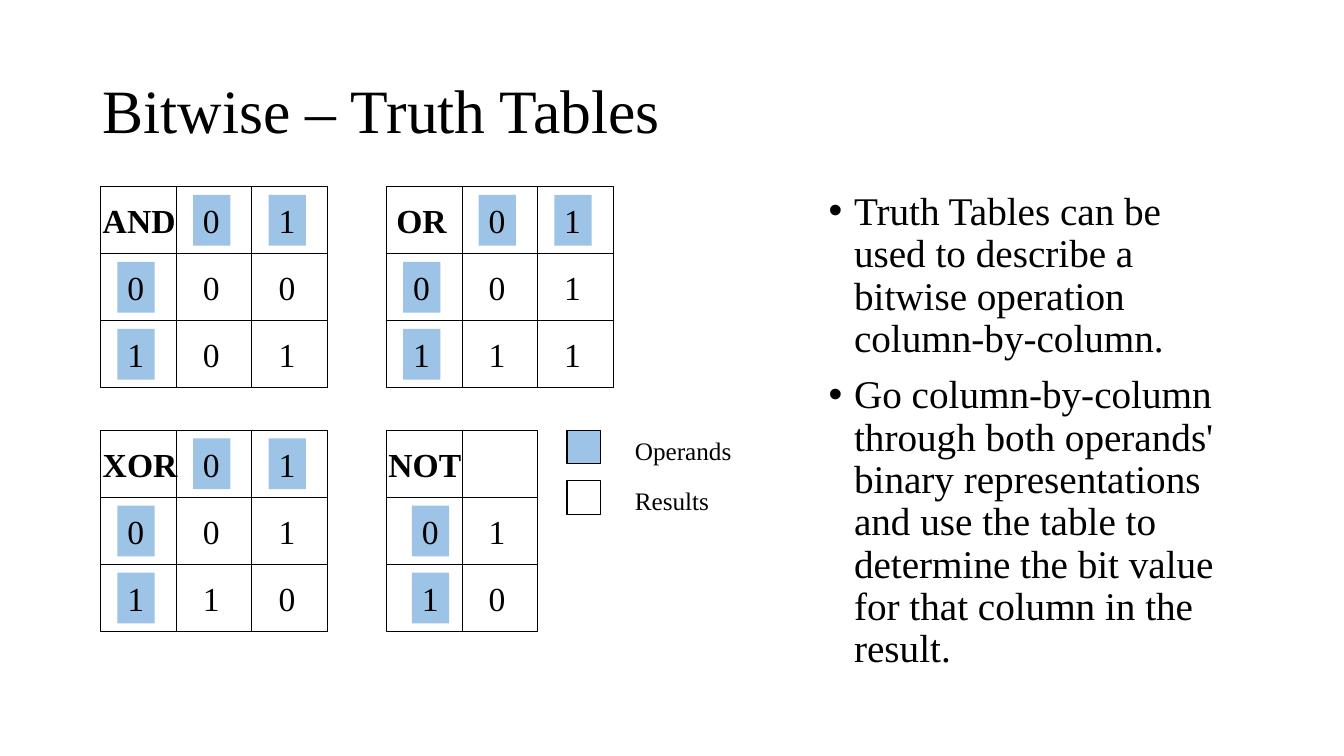
from pptx import Presentation
from pptx.dml.color import RGBColor
from pptx.enum.shapes import MSO_SHAPE
from pptx.enum.text import MSO_ANCHOR, MSO_AUTO_SIZE as AutoSize, PP_ALIGN
from pptx.util import Cm, Pt

BLACK = RGBColor(0x00, 0x00, 0x00)
WHITE = RGBColor(0xFF, 0xFF, 0xFF)
BLUE = RGBColor(0x9D, 0xC3, 0xE6)
FONT = "Times New Roman"
CELL_WIDTH, CELL_HEIGHT = 1.905, 1.69
DIGIT_WIDTH, DIGIT_HEIGHT = 0.94, 1.28


def write(para, text, size=24, bold=False):
    para.alignment = PP_ALIGN.LEFT
    span = para.add_run()
    span.text = text
    span.font.name = FONT
    span.font.size = Pt(size)
    span.font.bold = bold
    span.font.color.rgb = BLACK


def add_box(shapes, left, top, width, height, text="", fill=None,
            outline=False, size=24, bold=False):
    place = Cm(left), Cm(top), Cm(width), Cm(height)
    if fill is None and not outline:
        box = shapes.add_textbox(*place)
    else:
        box = shapes.add_shape(MSO_SHAPE.RECTANGLE, *place)
        box.shadow.inherit = False
        if fill is None:
            box.fill.background()
        else:
            box.fill.solid()
            box.fill.fore_color.rgb = fill
        if outline:
            box.line.color.rgb = BLACK
            box.line.width = Pt(0.75)
        else:
            box.line.fill.background()
    if text:
        frame = box.text_frame
        frame.word_wrap = False
        frame.auto_size = AutoSize.SHAPE_TO_FIT_TEXT
        frame.vertical_anchor = MSO_ANCHOR.TOP
        write(frame.paragraphs[0], text, size=size, bold=bold)


deck = Presentation()
deck.slide_width, deck.slide_height = Cm(33.87), Cm(19.05)
page = deck.slides.add_slide(deck.slide_layouts[1])

# Title
title = page.shapes.title
title.left, title.top, title.width, title.height = Cm(2.33), Cm(1.01), Cm(29.21), Cm(3.68)
title.text_frame.auto_size = AutoSize.NONE
title.text_frame.vertical_anchor = MSO_ANCHOR.MIDDLE
title_para = title.text_frame.paragraphs[0]
title_para.line_spacing = 0.9
write(title_para, "Bitwise – Truth Tables", size=44)

# Explanation
body = page.placeholders[1]
body.left, body.top, body.width, body.height = Cm(20.63), Cm(4.7), Cm(10.9), Cm(13.34)
body.text_frame.auto_size = AutoSize.NONE
points = [
    "Truth Tables can be used to describe a bitwise operation column-by-column.",
    "Go column-by-column through both operands' binary representations and use "
    "the table to determine the bit value for that column in the result.",
]
for index, point in enumerate(points):
    para = body.text_frame.paragraphs[0] if index == 0 else body.text_frame.add_paragraph()
    para.line_spacing = 0.9
    para.space_before = Pt(10)
    properties = para._p.get_or_add_pPr()
    properties.set("marL", str(Cm(0.64)))
    properties.set("indent", str(-Cm(0.64)))
    write(para, point, size=28)

# Truth tables: left, top, name offset, name width, first digit offset, rows
tables = [
    (2.54, 4.7, -0.2, 2.36, 0.42, [["AND", "0", "1"], ["0", "0", "0"], ["1", "0", "1"]]),
    (9.74, 10.84, -0.2, 2.34, 0.64, [["NOT", ""], ["0", "1"], ["1", "0"]]),
    (9.74, 4.7, 0, 1.78, 0.42, [["OR", "0", "1"], ["0", "0", "1"], ["1", "1", "1"]]),
    (2.54, 10.84, -0.2, 2.39, 0.42, [["XOR", "0", "1"], ["0", "0", "1"], ["1", "1", "0"]]),
]
for left, top, name_offset, name_width, first_offset, rows in tables:
    cells = [(row, column, left + column * CELL_WIDTH, top + row * CELL_HEIGHT, text)
             for row, texts in enumerate(rows) for column, text in enumerate(texts)]
    grid = page.shapes.add_group_shape()
    for row, column, x, y, text in cells:
        add_box(grid.shapes, x, y, CELL_WIDTH, CELL_HEIGHT, outline=True)
    for row, column, x, y, text in cells:
        if row == column == 0:
            add_box(page.shapes, x + name_offset, y + 0.21, name_width, DIGIT_HEIGHT,
                    text, bold=True)
        elif text:
            offset = first_offset if column == 0 else 0.42
            operand = row == 0 or column == 0
            add_box(page.shapes, x + offset, y + 0.21, DIGIT_WIDTH, DIGIT_HEIGHT,
                    text, fill=BLUE if operand else None)

# Legend
legend = [("Operands", BLUE, 2.95), ("Results", WHITE, 2.39)]
for index, (label, colour, width) in enumerate(legend):
    top = 10.84 + index * 1.27
    add_box(page.shapes, 14.29, top, 0.85, 0.85, fill=colour, outline=True)
    add_box(page.shapes, 15.75, top, width, 1.03, label, size=18)

deck.save("out.pptx")
